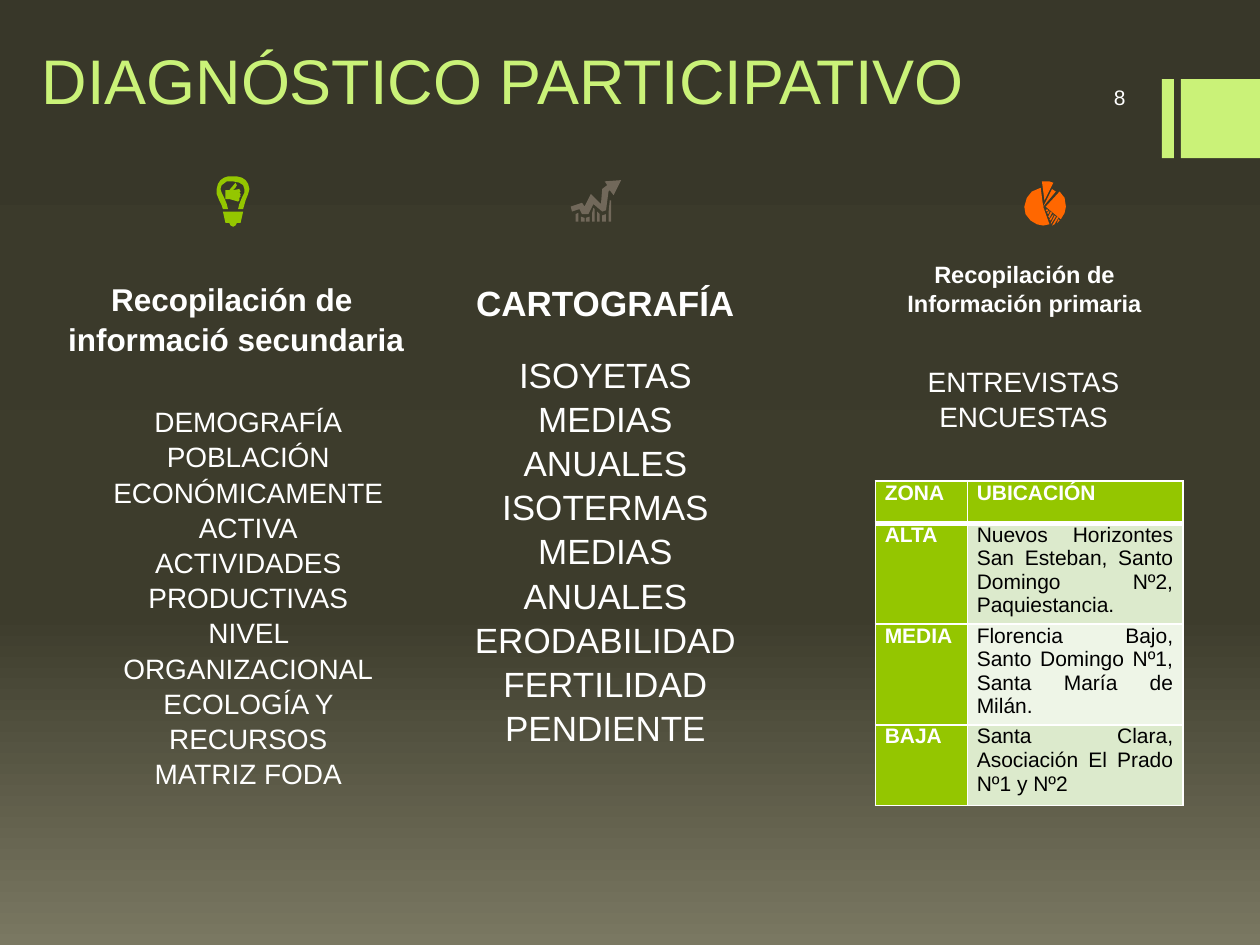
import copy

import lxml.etree
import pptx
import pptx.dml.color
import pptx.enum.shapes
import pptx.enum.text
import pptx.oxml.ns
import pptx.util

Pt = pptx.util.Pt
ALIGN = pptx.enum.text.PP_ALIGN
ANCHOR = pptx.enum.text.MSO_ANCHOR
FONT = "Arial"
COLORS = {
    "lime": "CAF278", "green": "94C600", "orange": "FF6700", "taupe": "71685A",
    "white": "FFFFFF", "black": "000000", "band": "DCEACC", "light_band": "EEF5E7",
}
BACKGROUND_STOPS = [(0, "383729"), (0.65, "3D3C2C"), (1, "7A7862")]

ICON_UNIT = 0.72
PIE = [
    [(841, 152), (845, 157), (846, 164), (845, 169), (842, 174), (830, 164)],
    [(841, 175), (839, 177), (840, 174)],
    [(837, 178), (840, 173), (839, 172), (835, 179)],
    [(834, 178), (838, 172), (837, 171), (834, 177)],
    [(834, 175), (836, 171), (836, 170), (833, 174)],
    [(833, 173), (835, 169), (834, 168), (832, 172)],
    [(832, 170), (833, 168), (833, 167), (831, 169)],
    [(831, 168), (832, 167), (831, 166), (830, 167)],
    [(835, 150), (828, 164), (826, 149), (819, 152), (815, 157), (813, 164),
     (814, 170), (818, 175), (823, 178), (828, 179), (833, 178), (828, 164),
     (838, 152)],
    [(829, 144), (827, 144), (829, 159), (836, 145), (833, 144)],
]
TREND = [
    [(493, 143), (487, 155), (484, 151), (483, 152), (481, 167), (478, 168),
     (471, 162), (467, 170), (462, 170), (460, 166), (454, 168), (453, 164),
     (462, 161), (464, 164), (469, 154), (477, 162), (478, 150), (482, 147),
     (480, 144)],
    [(457, 176), (459, 176), (459, 169), (457, 170)],
    [(461, 176), (464, 176), (464, 173), (461, 172)],
    [(465, 176), (468, 176), (468, 172), (465, 173)],
    [(470, 176), (472, 176), (472, 166), (471, 165), (470, 169)],
    [(474, 176), (476, 176), (476, 170), (474, 168)],
    [(478, 176), (481, 176), (481, 170), (478, 171)],
    [(483, 176), (485, 176), (485, 159), (484, 159), (483, 169)],
]
BULB = [
    [(177, 168), (193, 168), (191, 177), (188, 177), (187, 179), (185, 179.5),
     (183, 179), (182, 177), (179, 177)],
    [(190, 150), (191, 152), (190, 153), (191, 154), (191, 155), (190, 155),
     (191, 156), (190, 157), (190, 159), (189, 160), (182, 158), (179, 158),
     (179, 151), (182, 151), (187, 145), (188, 147), (187, 149), (185, 151)],
    [(177, 166), (181, 166), (180, 162), (178, 157), (176, 153), (175, 150),
     (176, 147), (180, 144), (185, 143.5), (190, 145), (193, 147), (194, 150),
     (194, 153), (192, 157), (190, 162), (189, 166), (193, 166), (195, 159),
     (197, 154), (198, 150), (197, 146), (195, 143), (192, 141), (188, 140),
     (185, 140), (181, 140), (178, 141), (175, 143), (173, 146), (172, 150),
     (172, 154), (174, 159), (176, 163)],
]

TABLE_ROWS = [
    ("ZONA", "UBICACIÓN", "green", 24),
    ("ALTA", "Nuevos Horizontes San Esteban, Santo Domingo Nº2, Paquiestancia.",
     "band", 57.5),
    ("MEDIA", "Florencia Bajo, Santo Domingo Nº1, Santa María de Milán.",
     "light_band", 57.5),
    ("BAJA", "Santa Clara, Asociación El Prado Nº1 y Nº2", "band", 46),
]


def rgb(value):
    return pptx.dml.color.RGBColor.from_string(value)


def write_text(text_frame, text, size, color, align, bold=False, spacing=1):
    text_frame.text = text
    for paragraph in text_frame.paragraphs:
        paragraph.alignment = align
        paragraph.line_spacing = spacing
        for run in paragraph.runs:
            run.font.name = FONT
            run.font.size = Pt(size)
            run.font.bold = bold
            run.font.color.rgb = rgb(COLORS[color])


def add_text(slide, box, text, size, bold=False, wrap=True, align=ALIGN.CENTER,
             anchor=ANCHOR.TOP):
    shape = slide.shapes.add_textbox(*map(Pt, box))
    shape.text_frame.word_wrap = wrap
    shape.text_frame.vertical_anchor = anchor
    write_text(shape.text_frame, text, size, "white", align, bold, 1.05)


def paint(shape, color):
    shape.shadow.inherit = False
    shape.fill.solid()
    shape.fill.fore_color.rgb = rgb(COLORS[color])
    shape.line.fill.background()


def add_bar(slide, left, width):
    shape = slide.shapes.add_shape(
        pptx.enum.shapes.MSO_SHAPE.RECTANGLE, Pt(left), Pt(45.2), Pt(width), Pt(45.2))
    paint(shape, "lime")


def add_icon(slide, contours, color):
    builder = slide.shapes.build_freeform(*contours[0][0], scale=Pt(ICON_UNIT))
    for index, contour in enumerate(contours):
        if index:
            builder.move_to(*contour[0])
        builder.add_line_segments(contour[1:], close=True)
    paint(builder.convert_to_shape(), color)


def set_background(slide):
    fill = slide.background.fill
    fill.gradient()
    fill.gradient_angle = 270
    stop_list = slide.element.xpath(".//p:bg//a:gsLst")[0]
    stop_list.append(copy.deepcopy(stop_list[-1]))
    for stop, (position, color) in zip(fill.gradient_stops, BACKGROUND_STOPS):
        stop.position = position
        stop.color.rgb = rgb(color)


def set_border(cell, side, width):
    qn = pptx.oxml.ns.qn
    properties = cell._tc.get_or_add_tcPr()
    line = lxml.etree.SubElement(properties, qn(f"a:ln{side}"), w=str(Pt(width)))
    fill = lxml.etree.SubElement(line, qn("a:solidFill"))
    lxml.etree.SubElement(fill, qn("a:srgbClr"), val=COLORS["white"])


def format_cell(cell, text, fill, color, bold, row_index):
    cell.margin_left = cell.margin_right = Pt(5.4)
    cell.margin_top = cell.margin_bottom = 0
    write_text(cell.text_frame, text, 12, color, ALIGN.JUSTIFY, bold)
    widths = {"L": 1, "R": 1, "T": 3 if row_index == 1 else 1,
              "B": 3 if row_index == 0 else 1}
    for side, width in widths.items():
        set_border(cell, side, width)
    cell.fill.solid()
    cell.fill.fore_color.rgb = rgb(COLORS[fill])


def add_zone_table(slide):
    height = sum(row[-1] for row in TABLE_ROWS)
    table = slide.shapes.add_table(
        len(TABLE_ROWS), 2, Pt(500.2), Pt(275), Pt(175.7), Pt(height)).table
    table.columns[0].width = Pt(52.6)
    table.columns[1].width = Pt(123.1)
    for index, (zone, location, fill, row_height) in enumerate(TABLE_ROWS):
        header = index == 0
        table.rows[index].height = Pt(row_height)
        format_cell(table.cell(index, 0), zone, "green", "white", True, index)
        format_cell(table.cell(index, 1), location, fill,
                    "white" if header else "black", header, index)


def set_title(slide):
    title = slide.shapes.title
    title.left, title.top, title.width, title.height = map(Pt, (16.6, 8.6, 576, 62))
    title.text_frame.vertical_anchor = ANCHOR.BOTTOM
    write_text(title.text_frame, "DIAGNÓSTICO PARTICIPATIVO", 36, "lime", ALIGN.LEFT)


def main():
    presentation = pptx.Presentation()
    presentation.slide_width = Pt(720)
    presentation.slide_height = Pt(540)
    slide = presentation.slides.add_slide(presentation.slide_layouts[5])
    set_background(slide)
    add_bar(slide, 664, 6.8)
    add_bar(slide, 674.8, 45.2)
    set_title(slide)
    add_text(slide, (576, 43.2, 74.2, 23.8), "8", 12, align=ALIGN.RIGHT,
             anchor=ANCHOR.MIDDLE)
    add_icon(slide, PIE, "orange")
    add_icon(slide, TREND, "taupe")
    add_icon(slide, BULB, "green")
    add_text(slide, (26, 155.5, 213, 51), "Recopilación de\n informació secundaria",
             18, bold=True, wrap=False)
    add_text(slide, (50.4, 226.8, 183, 220.3),
             "DEMOGRAFÍA\nPOBLACIÓN ECONÓMICAMENTE ACTIVA\nACTIVIDADES PRODUCTIVAS\n"
             "NIVEL ORGANIZACIONAL\nECOLOGÍA Y RECURSOS\nMATRIZ FODA", 16)
    add_text(slide, (264.2, 156.2, 163.4, 31.7), "CARTOGRAFÍA", 20, bold=True, wrap=False)
    add_text(slide, (255.6, 197.3, 180.7, 225.4),
             "ISOYETAS MEDIAS ANUALES\nISOTERMAS MEDIAS ANUALES\nERODABILIDAD\n"
             "FERTILIDAD\nPENDIENTE", 20)
    add_text(slide, (510.5, 144, 149.8, 135.4), "Recopilación de\nInformación primaria",
             13.5, bold=True, wrap=False)
    add_text(slide, (519.8, 203.8, 130.3, 56.9), "ENTREVISTAS\nENCUESTAS", 16)
    add_zone_table(slide)
    presentation.save("out.pptx")


if __name__ == "__main__":
    main()
